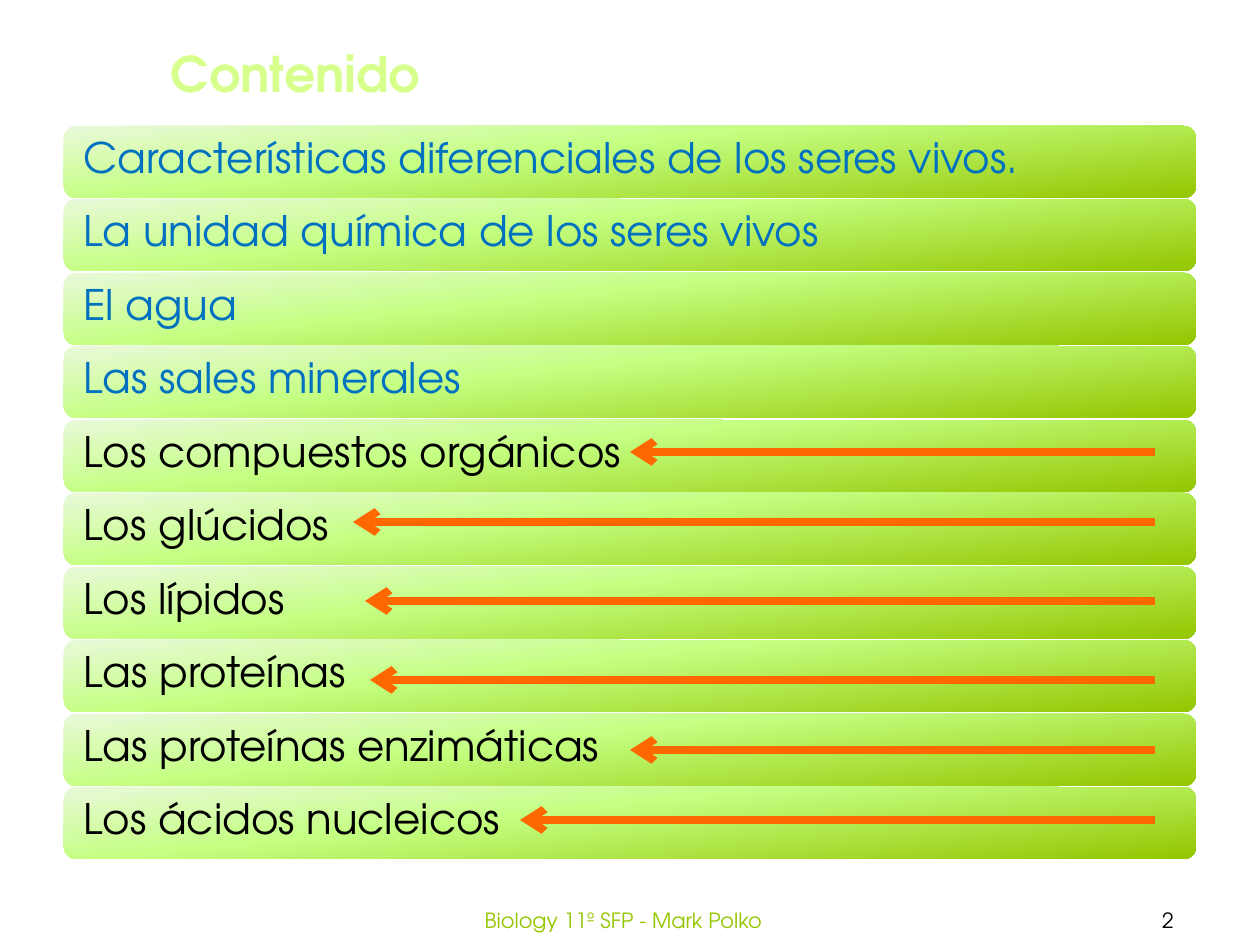
from copy import deepcopy

from lxml import etree
from pptx import Presentation
from pptx import util as u
from pptx.dml import color
from pptx.enum import shapes, text
from pptx.oxml import ns

COLORS = {
    "pale": "EAF9DA", "lime": "C4FF82", "green": "94C600",
    "title": "D6FF8C", "done": "0070C0", "pending": "000000",
    "arrow": "FF6700",
}


def rgb(name):
    return color.RGBColor.from_string(COLORS[name])


class Deck:
    font = "TeX Gyre Adventor"
    scale = 914400 / 126

    def __init__(self, width, height):
        self.prs = Presentation()
        self.prs.slide_width = self.px(width)
        self.prs.slide_height = self.px(height)
        self.slide = self.prs.slides.add_slide(self.prs.slide_layouts[6])

    def px(self, length):
        return u.Emu(round(length * self.scale))

    def set_text(self, shape, words, ink, size, align, frame_format, bold=False):
        frame = shape.text_frame
        for key, value in frame_format.items():
            setattr(frame, key, value)
        paragraph = frame.paragraphs[0]
        paragraph.alignment = align
        run = paragraph.add_run()
        run.text = words
        font_format = {"name": self.font, "size": u.Pt(size), "bold": bold}
        for key, value in font_format.items():
            setattr(run.font, key, value)
        run.font.color.rgb = rgb(ink)
        return paragraph

    def label(self, box, words, ink, size, anchor, wrap=True, bold=False):
        shape = self.slide.shapes.add_textbox(*map(self.px, box))
        self.set_text(shape, words, ink, size, text.PP_ALIGN.CENTER,
                      {"word_wrap": wrap, "vertical_anchor": anchor}, bold)

    def bar(self, box, words, ink):
        shape = self.slide.shapes.add_shape(
            shapes.MSO_SHAPE.ROUNDED_RECTANGLE, *map(self.px, box))
        shape.shadow.inherit = False
        shape.line.fill.background()
        self.gradient(shape)
        paragraph = self.set_text(
            shape, words, ink, 24, text.PP_ALIGN.LEFT,
            {"word_wrap": True, "vertical_anchor": text.MSO_ANCHOR.MIDDLE,
             "margin_left": self.px(16), "margin_right": self.px(16),
             "margin_top": self.px(13), "margin_bottom": self.px(17)})
        paragraph.line_spacing = 0.9

    def gradient(self, shape):
        shape.fill.gradient()
        shape.fill.gradient_angle = 276
        stops = shape.element.spPr.find(".//" + ns.qn("a:gsLst"))
        stops.insert(1, deepcopy(stops[0]))
        ramp = (("pale", 0), ("lime", 0.4), ("green", 1))
        for stop, (name, position) in zip(shape.fill.gradient_stops, ramp):
            stop.color.rgb = rgb(name)
            stop.position = position

    def arrow(self, start, tip, y):
        pointer = self.slide.shapes.add_connector(
            shapes.MSO_CONNECTOR.STRAIGHT, *map(self.px, (start, y, tip, y)))
        pointer.line.color.rgb = rgb("arrow")
        pointer.line.width = u.Pt(4.5)
        properties = pointer.element.spPr
        etree.SubElement(properties.find(ns.qn("a:ln")), ns.qn("a:tailEnd"), type="arrow")
        etree.SubElement(properties, ns.qn("a:effectLst"))


TOPICS = [
    ("Características diferenciales de los seres vivos.", None),
    ("La unidad química de los seres vivos", None),
    ("El agua", None),
    ("Las sales minerales", None),
    ("Los compuestos orgánicos", (630, 452)),
    ("Los glúcidos", (353, 522)),
    ("Los lípidos", (365, 601)),
    ("Las proteínas", (370, 680)),
    ("Las proteínas enzimáticas", (630, 750)),
    ("Los ácidos nucleicos", (520, 820)),
]


def main():
    deck = Deck(1260, 945)
    middle = text.MSO_ANCHOR.MIDDLE
    deck.label((1076, 895, 184, 50), "2", "pending", 12, middle)
    for row, (topic, pointer) in enumerate(TOPICS):
        deck.bar((64, 126 + row * 147 // 2, 1132, 72), topic,
                 "pending" if pointer else "done")
    deck.label((157, 37, 277, 72), "Contenido", "title", 28,
               text.MSO_ANCHOR.TOP, wrap=False, bold=True)
    deck.label((382, 895, 483, 50), "Biology 11º SFP - Mark Polko", "green", 12, middle)
    for topic, pointer in TOPICS:
        if pointer:
            deck.arrow(1155, *pointer)
    deck.prs.save("out.pptx")


if __name__ == "__main__":
    main()
